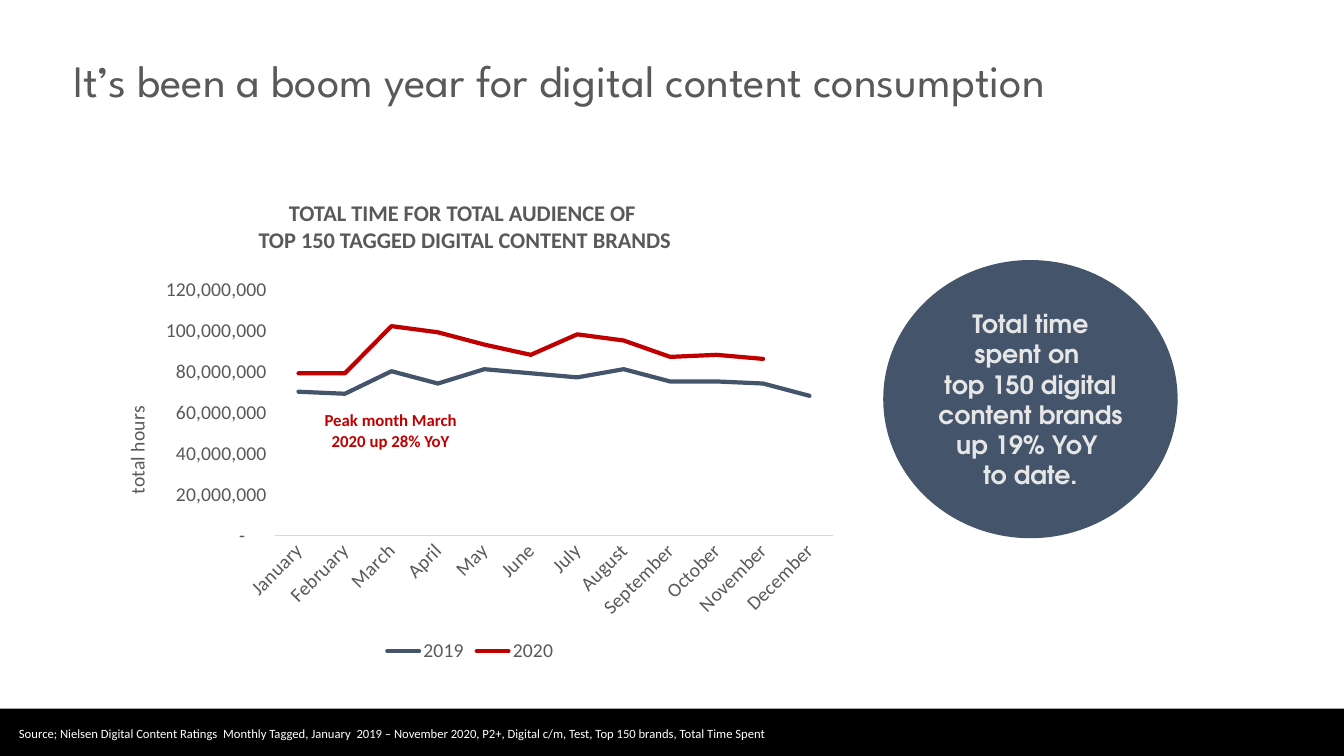
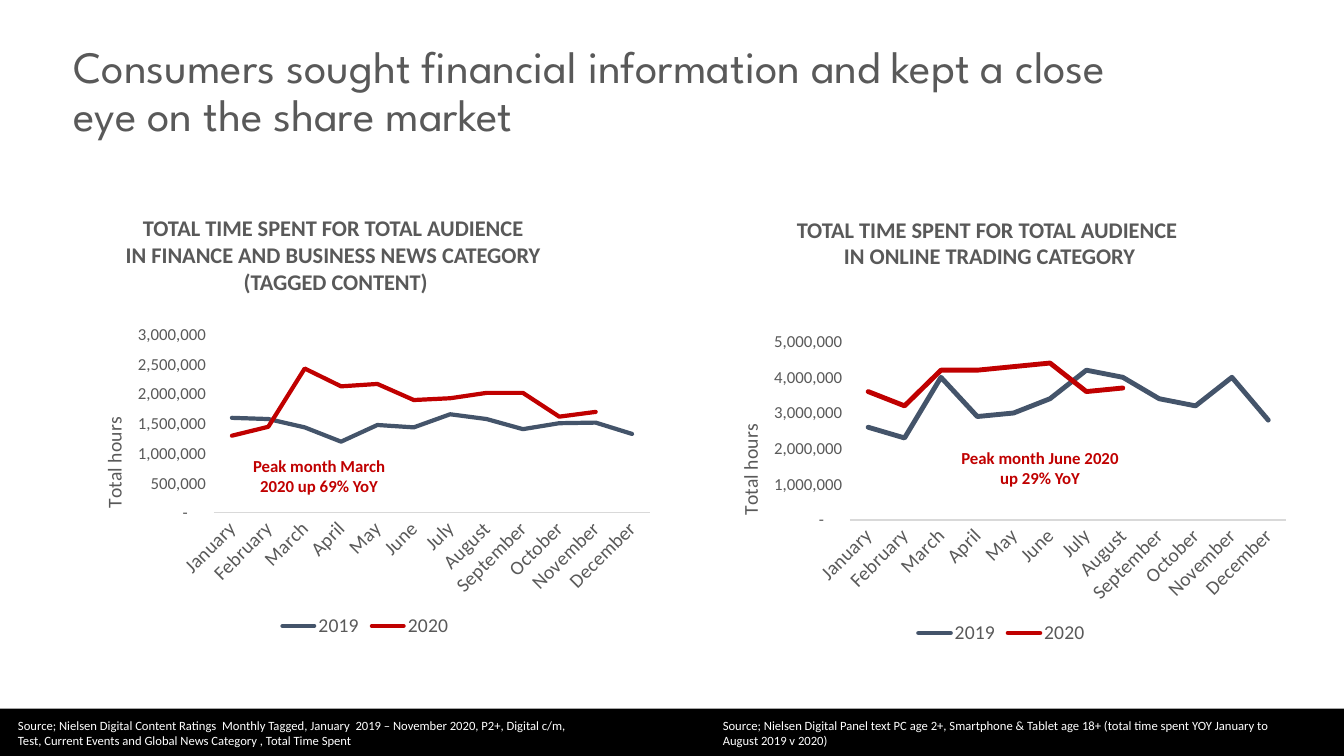
"""Builds two slides on digital content consumption, with monthly line charts."""
from lxml import etree
from pptx import Presentation
from pptx.chart.data import CategoryChartData
from pptx.dml.color import RGBColor
from pptx.enum.chart import XL_CHART_TYPE, XL_LEGEND_POSITION, XL_TICK_MARK
from pptx.enum.shapes import MSO_SHAPE
from pptx.enum.text import MSO_ANCHOR, PP_ALIGN
from pptx.oxml.ns import qn
from pptx.util import Inches, Pt

LINE_CHART = XL_CHART_TYPE.LINE
LEGEND_BOTTOM = XL_LEGEND_POSITION.BOTTOM
NO_TICKS = XL_TICK_MARK.NONE
OVAL, RECTANGLE = MSO_SHAPE.OVAL, MSO_SHAPE.RECTANGLE
TOP, MIDDLE = MSO_ANCHOR.TOP, MSO_ANCHOR.MIDDLE
LEFT, CENTER = PP_ALIGN.LEFT, PP_ALIGN.CENTER

BLACK = RGBColor(0x00, 0x00, 0x00)
WHITE = RGBColor(0xFF, 0xFF, 0xFF)
GREY = RGBColor(0x59, 0x59, 0x59)
PALE = RGBColor(0xE7, 0xE6, 0xE6)
RULE = RGBColor(0xD9, 0xD9, 0xD9)
NAVY = RGBColor(0x44, 0x54, 0x6A)
RED = RGBColor(0xC0, 0x00, 0x00)

BODY_FONT, TITLE_FONT, CALLOUT_FONT = "Calibri", "League Spartan", "TeX Gyre Adventor"
SLIDE_WIDTH, SLIDE_HEIGHT, BAND_TOP = 13.33, 7.5, 7.03
HOURS_FORMAT = '_-* #,##0_-;\\-* #,##0_-;_-* "-"??_-;_-@_-'
MONTHS = ["January", "February", "March", "April", "May", "June", "July",
          "August", "September", "October", "November", "December"]
SERIES_COLORS = {"2019": NAVY, "2020": RED}

LARGE = {"size": (7.49, 3.95), "plot": (1.81, 0.2, 5.53, 2.44),
         "axis_title": (0.27, 1.32), "value_size": 14}
SMALL = {"size": (5.89, 3.23), "plot": (1.44, 0.18, 4.33, 1.77),
         "axis_title": (0.28, 0.96), "value_size": 12}

SLIDES = [
    {
        "title": "It’s been a boom year for digital content consumption",
        "title_height": 1.14,
        "callout": ("Total time spent on \vtop 150 digital content brands up 19% YoY \vto date.",
                    (8.76, 2.58, 2.92, 2.76)),
        "headings": [("TOTAL TIME FOR TOTAL AUDIENCE OF \vTOP 150 TAGGED DIGITAL CONTENT BRANDS",
                      (0.92, 1.93, 7.38, 0.64))],
        "charts": [{
            "at": (0.92, 2.67), "layout": LARGE, "axis": "total hours",
            "max": 120, "step": 20, "unit": 1_000_000, "weight": 3,
            "2019": [70, 69, 80, 74, 81, 79, 77, 81, 75, 75, 74, 68],
            "2020": [79, 79, 102, 99, 93, 88, 98, 95, 87, 88, 86],
        }],
        "peaks": [("Peak month March 2020 up 28% YoY", (2.98, 4.02))],
        "sources": [("Source; Nielsen Digital Content Ratings  Monthly Tagged, January  2019 – "
                     "November 2020, P2+, Digital c/m, Test, Top 150 brands, Total Time Spent",
                     (0.09, 7.15, 10.86, 0.25))],
    },
    {
        "title": "Consumers sought financial information and kept a close eye on the share market",
        "title_height": 1.34,
        "headings": [
            ("TOTAL TIME SPENT FOR TOTAL AUDIENCE \vIN FINANCE AND BUSINESS NEWS CATEGORY \n"
             "(TAGGED CONTENT)", (0.2, 2.08, 6.26, 0.91)),
            ("TOTAL TIME SPENT FOR TOTAL AUDIENCE \vIN ONLINE TRADING CATEGORY",
             (6.87, 2.09, 5.89, 0.91)),
        ],
        "charts": [
            {
                "at": (0.68, 3.14), "layout": SMALL, "axis": "Total hours",
                "max": 300, "step": 50, "unit": 10_000, "weight": 3,
                "2019": [160, 158, 144, 120, 148, 144, 166, 158, 141, 151, 152, 133],
                "2020": [130, 145, 243, 213, 217, 190, 193, 202, 202, 162, 170],
            },
            {
                "at": (6.99, 3.21), "layout": SMALL, "axis": "Total hours",
                "max": 50, "step": 10, "unit": 100_000, "weight": 3.5,
                "2019": [26, 23, 40, 29, 30, 34, 42, 40, 34, 32, 40, 28],
                "2020": [36, 32, 42, 42, 43, 44, 36, 37],
            },
        ],
        "peaks": [("Peak month March 2020 up 69% YoY", (2.27, 4.47)),
                  ("Peak month June 2020 up 29% YoY", (9.42, 4.39))],
        "sources": [
            ("Source; Nielsen Digital Content Ratings  Monthly Tagged, January  2019 – "
             "November 2020, P2+, Digital c/m, Test, Current Events and Global News Category , "
             "Total Time Spent", (0.08, 7.07, 5.69, 0.4)),
            ("Source; Nielsen Digital Panel text PC age 2+, Smartphone & Tablet age 18+ "
             "(total time spent YOY January to August 2019 v 2020)", (7.07, 7.07, 5.69, 0.4)),
        ],
    },
]


def style_font(font, size, color, name=BODY_FONT, bold=False):
    font.size, font.name, font.bold = Pt(size), name, bold
    font.color.rgb = color


def write(frame, text, *, size, color, name=BODY_FONT, bold=False,
          align=LEFT, anchor=TOP, spacing=None):
    frame.word_wrap = True
    frame.vertical_anchor = anchor
    frame.text = text
    for paragraph in frame.paragraphs:
        paragraph.alignment = align
        if spacing:
            paragraph.line_spacing = spacing
        for run in paragraph.runs:
            style_font(run.font, size, color, name, bold)
        for line_break in paragraph._p.findall(qn("a:br")):
            etree.SubElement(line_break, qn("a:rPr"), sz=str(size * 100))


def add_text(slide, text, at, **text_format):
    box = slide.shapes.add_textbox(*map(Inches, at))
    write(box.text_frame, text, **text_format)


def add_filled(slide, preset, at, color):
    shape = slide.shapes.add_shape(preset, *map(Inches, at))
    shape.shadow.inherit = False
    shape.fill.solid()
    shape.fill.fore_color.rgb = color
    shape.line.fill.background()
    return shape


def place(element, index, size, at, inner=False):
    """Positions a chart part from its offset, and optionally its extent, in inches."""
    for previous in element.findall(qn("c:layout")):
        element.remove(previous)
    layout = etree.Element(qn("c:layout"))
    manual = etree.SubElement(layout, qn("c:manualLayout"))
    settings = [("layoutTarget", "inner")] if inner else []
    settings += [("xMode", "edge"), ("yMode", "edge")]
    settings += [(key, f"{inches / size[i % 2]:.4f}")
                 for i, (key, inches) in enumerate(zip("xywh", at))]
    for key, value in settings:
        etree.SubElement(manual, qn(f"c:{key}"), val=value)
    element.insert(index, layout)


def add_hours_chart(slide, content):
    layout, unit = content["layout"], content["unit"]
    data = CategoryChartData()
    data.categories = MONTHS
    for year in SERIES_COLORS:
        hours = [value * unit for value in content[year]]
        data.add_series(year, hours + [None] * (len(MONTHS) - len(hours)))
    at = map(Inches, content["at"] + layout["size"])
    chart = slide.shapes.add_chart(LINE_CHART, *at, data).chart
    chart.has_title = False
    style_font(chart.font, 10, BLACK)
    chart.plots[0].vary_by_categories = False
    for series in chart.plots[0].series:
        series.smooth = False
        series.format.line.color.rgb = SERIES_COLORS[series.name]
        series.format.line.width = Pt(content["weight"])
        series.format.line._get_or_add_ln().set("cap", "rnd")

    chart.has_legend = True
    chart.legend.position = LEGEND_BOTTOM
    chart.legend.include_in_layout = False
    style_font(chart.legend.font, 14, GREY)

    months, hours = chart.category_axis, chart.value_axis
    for axis, size in ((months, 14), (hours, layout["value_size"])):
        axis.major_tick_mark = axis.minor_tick_mark = NO_TICKS
        axis.has_major_gridlines = False
        style_font(axis.tick_labels.font, size, GREY)
    months.format.line.color.rgb = RULE
    months.format.line.width = Pt(0.75)
    months._element.txPr.bodyPr.set("rot", "-2700000")
    hours.format.line.fill.background()
    hours.minimum_scale = 0
    hours.maximum_scale = content["max"] * unit
    hours.major_unit = content["step"] * unit
    hours.tick_labels.number_format = HOURS_FORMAT
    hours.tick_labels.number_format_is_linked = False

    frame = hours.axis_title.text_frame
    write(frame, content["axis"], size=14, color=GREY, align=CENTER)
    frame._txBody.bodyPr.set("rot", "-5400000")
    frame._txBody.bodyPr.set("vert", "horz")
    place(hours.axis_title._element, 1, layout["size"], layout["axis_title"])
    place(chart._chartSpace.chart.plotArea, 0, layout["size"], layout["plot"], inner=True)


def build_slide(deck, content):
    slide = deck.slides.add_slide(deck.slide_layouts[6])
    add_filled(slide, RECTANGLE, (0, BAND_TOP, SLIDE_WIDTH, SLIDE_HEIGHT - BAND_TOP), BLACK)
    add_text(slide, content["title"], (0.63, 0.25, 10.95, content["title_height"]),
             size=32, color=GREY, name=TITLE_FONT, anchor=MIDDLE, spacing=0.9)
    for chart in content["charts"]:
        add_hours_chart(slide, chart)
    for text, at in content["headings"]:
        add_text(slide, text, at, size=16, color=GREY, bold=True, align=CENTER)
    for text, corner in content["peaks"]:
        add_text(slide, text, corner + (1.79, 0.5), size=12, color=RED, bold=True, align=CENTER)
    for text, at in content["sources"]:
        add_text(slide, text, at, size=9, color=WHITE)
    if "callout" in content:
        text, at = content["callout"]
        circle = add_filled(slide, OVAL, at, NAVY)
        write(circle.text_frame, text, size=18, color=PALE, name=CALLOUT_FONT,
              bold=True, align=CENTER, anchor=MIDDLE)


def main():
    deck = Presentation()
    deck.slide_width, deck.slide_height = Inches(SLIDE_WIDTH), Inches(SLIDE_HEIGHT)
    for content in SLIDES:
        build_slide(deck, content)
    deck.save("out.pptx")


if __name__ == "__main__":
    main()
